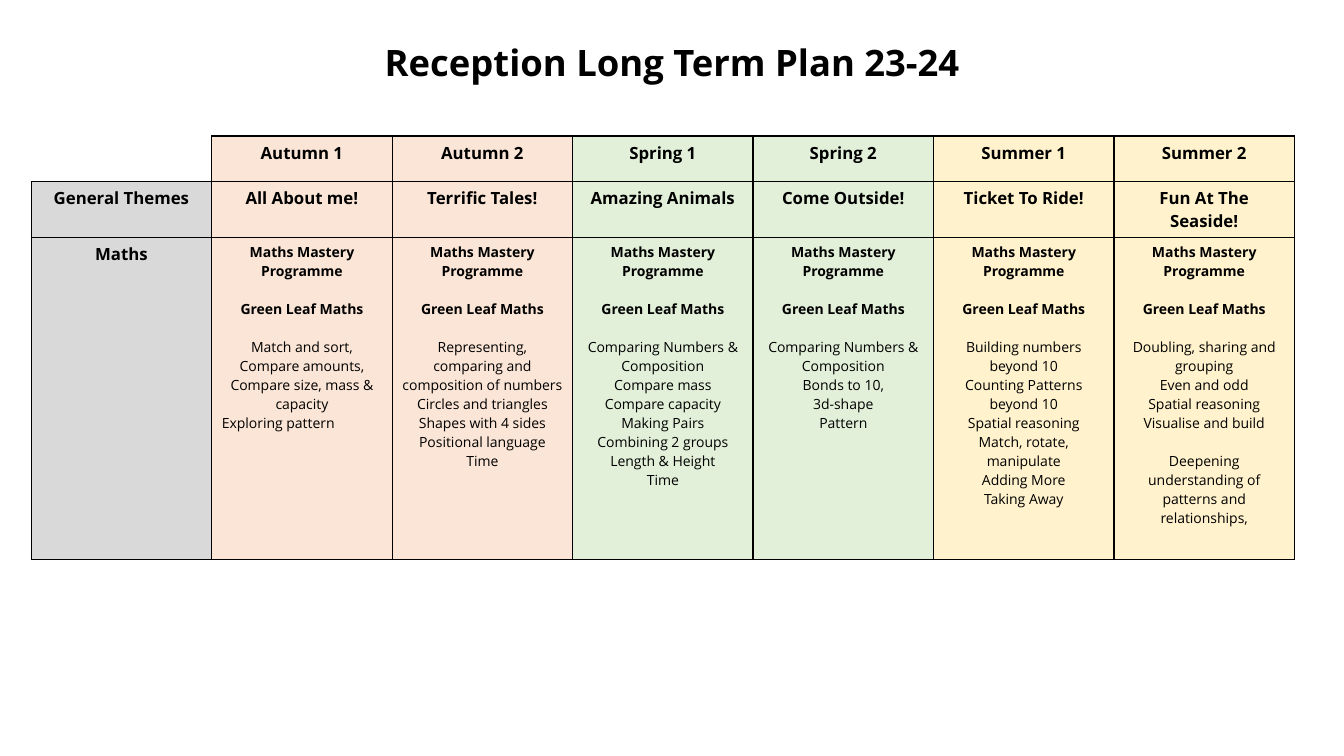
import pptx
import pptx.util
import pptx.dml.color
import pptx.enum.text
import pptx.oxml.ns
from lxml import etree

TITLE = "Reception Long Term Plan 23-24"
FONT = "Open Sans"
COLOURS = {
    "text": "000000", "border": "000000", "corner": "FFFFFF", "label": "D9D9D9",
    "Autumn": "FBE5D6", "Spring": "E2F0D9", "Summer": "FFF2CC",
}
ROW_LABELS = ["", "General Themes", "Maths"]
SCHEMES = ["Maths Mastery Programme", "Green Leaf Maths"]

# Each term: name, theme, groups of maths topics
TERMS = [
    ("Autumn 1", "All About me!",
     [["Match and sort,", "Compare amounts,", "Compare size, mass & capacity",
       "Exploring pattern"]]),
    ("Autumn 2", "Terrific Tales!",
     [["Representing, comparing and composition of numbers", "Circles and triangles",
       "Shapes with 4 sides", "Positional language", "Time"]]),
    ("Spring 1", "Amazing Animals",
     [["Comparing Numbers & Composition", "Compare mass", "Compare capacity",
       "Making Pairs", "Combining 2 groups", "Length & Height", "Time"]]),
    ("Spring 2", "Come Outside!",
     [["Comparing Numbers & Composition", "Bonds to 10,", "3d-shape", "Pattern"]]),
    ("Summer 1", "Ticket To Ride!",
     [["Building numbers beyond 10", "Counting Patterns beyond 10", "Spatial reasoning",
       "Match, rotate, manipulate", "Adding More", "Taking Away"]]),
    ("Summer 2", "Fun At The Seaside!",
     [["Doubling, sharing and grouping", "Even and odd", "Spatial reasoning",
       "Visualise and build"],
      ["Deepening understanding of patterns and relationships,"]]),
]
LEFT_ALIGNED = {"Exploring pattern"}

Inches, Pt = pptx.util.Inches, pptx.util.Pt
ALIGN = pptx.enum.text.PP_ALIGN
COLUMN_WIDTH = 1.79
ROW_HEIGHTS = [0.45, 0.55, 3.2]
LINE_GAP = 13.6


def rgb(name):
    return pptx.dml.color.RGBColor.from_string(COLOURS[name])


def write_paragraph(frame, text, size, bold=True, gap=0):
    """Fill the first paragraph of the frame if it is empty, else add one."""
    first = frame.paragraphs[0]
    paragraph = frame.add_paragraph() if first.runs else first
    paragraph.alignment = ALIGN.LEFT if text in LEFT_ALIGNED else ALIGN.CENTER
    if gap:
        paragraph.space_before = Pt(gap)
    run = paragraph.add_run()
    run.text = text
    run.font.name = FONT
    run.font.size = Pt(size)
    run.font.bold = bold
    run.font.color.rgb = rgb("text")
    return paragraph


def style_cell(cell, colour, sides="LRTB"):
    """Draw the given sides, hide the others, and fill the cell."""
    properties = cell._tc.get_or_add_tcPr()
    qn = pptx.oxml.ns.qn
    for side in "LRTB":
        line = etree.SubElement(properties, qn(f"a:ln{side}"), w=str(Pt(1)))
        if side in sides:
            fill = etree.SubElement(line, qn("a:solidFill"))
            etree.SubElement(fill, qn("a:srgbClr"), val=COLOURS["border"])
        else:
            etree.SubElement(line, qn("a:noFill"))
    cell.fill.solid()
    cell.fill.fore_color.rgb = rgb(colour)


def add_title(slide):
    box = slide.shapes.add_textbox(Inches(0.92), Inches(0.24), Inches(11.5), Inches(0.65))
    frame = box.text_frame
    frame.word_wrap = True
    frame.vertical_anchor = pptx.enum.text.MSO_ANCHOR.BOTTOM
    write_paragraph(frame, TITLE, 26).line_spacing = 0.9


def write_maths(frame, topic_groups):
    for index, scheme in enumerate(SCHEMES):
        write_paragraph(frame, scheme, 10, gap=LINE_GAP if index else 0)
    for topics in topic_groups:
        for index, topic in enumerate(topics):
            write_paragraph(frame, topic, 10, bold=False, gap=0 if index else LINE_GAP)


def add_plan(slide):
    column_count = len(TERMS) + 1
    table = slide.shapes.add_table(
        len(ROW_HEIGHTS), column_count, Inches(0.31), Inches(1.35),
        Inches(COLUMN_WIDTH * column_count), Inches(sum(ROW_HEIGHTS))).table
    table.first_row = False
    table.horz_banding = False
    for column in table.columns:
        column.width = Inches(COLUMN_WIDTH)
    for row, height in zip(table.rows, ROW_HEIGHTS):
        row.height = Inches(height)

    for index, label in enumerate(ROW_LABELS):
        cell = table.cell(index, 0)
        if label:
            style_cell(cell, "label")
            write_paragraph(cell.text_frame, label, 12)
        else:
            style_cell(cell, "corner", sides="RB")

    for column, (term, theme, topic_groups) in enumerate(TERMS, start=1):
        cells = [table.cell(row, column) for row in range(len(ROW_HEIGHTS))]
        for cell in cells:
            style_cell(cell, term.split()[0])
        for cell, heading in zip(cells, (term, theme)):
            write_paragraph(cell.text_frame, heading, 12)
        write_maths(cells[2].text_frame, topic_groups)


def main():
    presentation = pptx.Presentation()
    presentation.slide_width = Inches(13.33)
    presentation.slide_height = Inches(7.5)
    slide = presentation.slides.add_slide(presentation.slide_layouts[6])
    add_plan(slide)
    add_title(slide)
    presentation.save("out.pptx")


if __name__ == "__main__":
    main()
